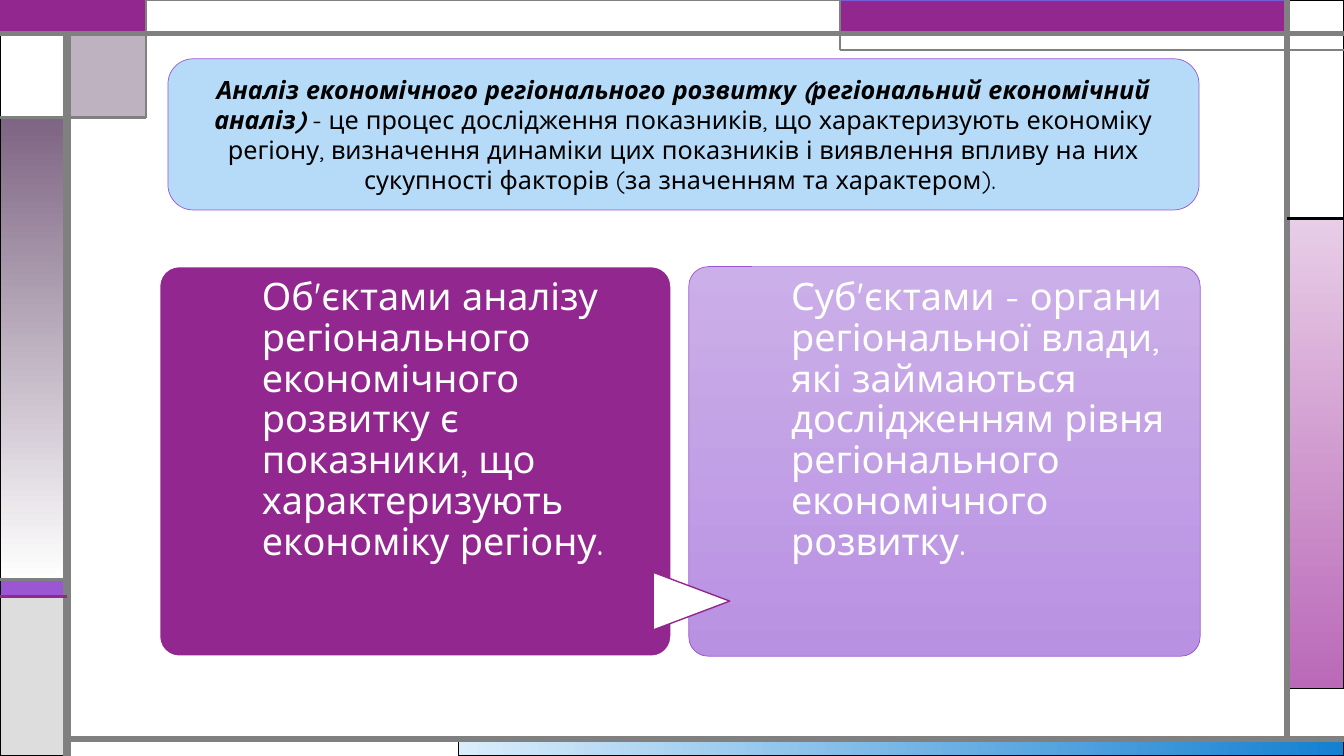
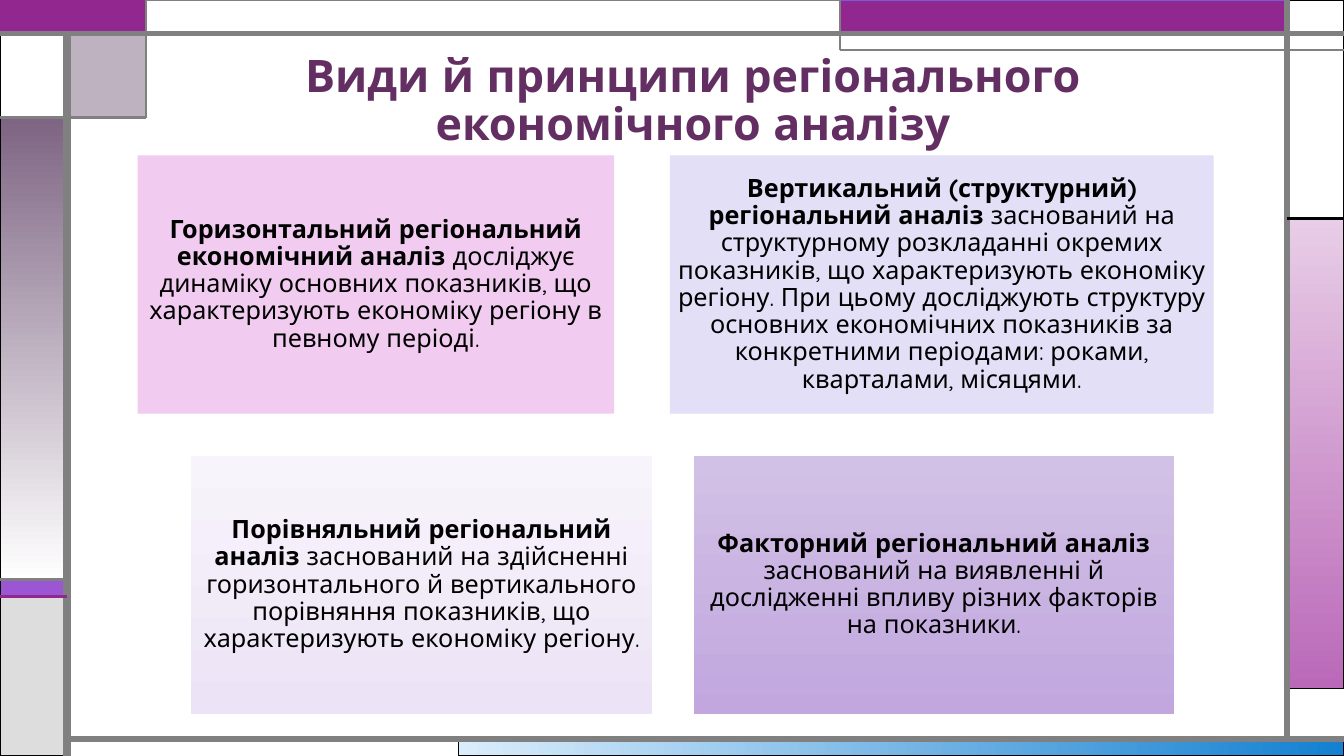
import pptx
import pptx.dml.color
import pptx.enum.shapes
import pptx.enum.text
import pptx.oxml.ns
import pptx.util
from lxml import etree

PX = 9525
WIDTH, HEIGHT = 1280, 720
FONT = "Quicksand"
BLACK, WHITE, GRAY = "000000", "FFFFFF", "808080"
PLUM, VIOLET, MAUVE, TITLE = "92278F", "9B57D3", "7E6583", "632E62"
# Edges of the frame
LEFT, TAB, SPLIT, RIGHT = 64, 139, 800, 1226
TOP, STEP, LOW, BASE, FLOOR = 32, 112, 552, 568, 704

KIND = pptx.enum.shapes.MSO_SHAPE
ANCHOR = pptx.enum.text.MSO_ANCHOR
ALIGN = pptx.enum.text.PP_ALIGN


def px(*nums):
    return [pptx.util.Emu(n * PX) for n in nums]


def color(code):
    return pptx.dml.color.RGBColor.from_string(code)


def add_xml(parent, tag, **attrs):
    etree.SubElement(parent, pptx.oxml.ns.qn(tag), **attrs)


def paint(shape, fill, angle=270):
    """Fill with one colour, or with a pair as a gradient (270 runs down)."""
    if isinstance(fill, str):
        shape.fill.solid()
        shape.fill.fore_color.rgb = color(fill)
        return
    shape.fill.gradient()
    shape.fill.gradient_angle = angle
    for stop, code in zip(shape.fill.gradient_stops, fill):
        stop.color.rgb = color(code)


def add_box(slide, area, fill, line=None, width=0.75, kind=KIND.RECTANGLE, angle=270):
    shape = slide.shapes.add_shape(kind, *px(*area))
    shape.shadow.inherit = False
    paint(shape, fill, angle)
    if line:
        shape.line.color.rgb = color(line)
        shape.line.width = pptx.util.Pt(width)
    else:
        shape.line.fill.background()
    return shape


def add_line(slide, start, end, width, code=GRAY):
    line = slide.shapes.add_connector(
        pptx.enum.shapes.MSO_CONNECTOR.STRAIGHT, *px(*start, *end))
    line.line.color.rgb = color(code)
    line.line.width = pptx.util.Pt(width)
    add_xml(line._element.spPr, "a:effectLst")


def write(shape, parts, size, code=BLACK, insets=(10, 5, 10, 5),
          anchor=ANCHOR.MIDDLE, align=ALIGN.CENTER, spacing=0.9):
    """Write one paragraph and return its runs."""
    frame = shape.text_frame
    frame.word_wrap = True
    frame.vertical_anchor = anchor
    (frame.margin_left, frame.margin_top,
     frame.margin_right, frame.margin_bottom) = px(*insets)
    para = frame.paragraphs[0]
    para.alignment = align
    para.line_spacing = spacing
    para.font.name = FONT
    para.font.size = pptx.util.Pt(size)
    para.font.color.rgb = color(code)
    for part in parts:
        para.add_run().text = part
    return para.runs


def add_frame(slide):
    """Draw the bands and rules around every slide."""
    side = WIDTH - RIGHT
    add_box(slide, (437, FLOOR, WIDTH - 437, HEIGHT - FLOOR),
            ("DAEDFB", "1480D1"), BLACK, angle=0)
    veil = None
    for area, fill, line, width in (
        ((RIGHT, 208, side, 448), ("E8CDE7", "BA69B8"), BLACK, 0.75),
        ((0, LOW, LEFT, BASE - LOW), VIOLET, BLACK, 0.75),
        ((0, BASE, LEFT, HEIGHT - BASE), "DDDDDD", BLACK, 0.75),
        ((RIGHT, 0, side, 208), WHITE, BLACK, 0.75),
        ((SPLIT, 0, RIGHT - SPLIT, TOP), PLUM, "755DD9", 0.75),
        ((0, STEP, LEFT, LOW - STEP), (MAUVE, WHITE), BLACK, 0.75),
        ((0, TOP, LEFT, STEP - TOP), WHITE, BLACK, 0.75),
        ((0, 0, TAB, TOP), PLUM, PLUM, 1.5),
        ((TAB, 0, SPLIT - TAB, TOP), WHITE, GRAY, 0.75),
        ((LEFT, TOP, TAB - LEFT, STEP - TOP), MAUVE, BLACK, 0.75),
    ):
        veil = add_box(slide, area, fill, line, width)
    tint = veil._element.spPr.find(pptx.oxml.ns.qn("a:solidFill"))[0]
    add_xml(tint, "a:alpha", val="50000")

    for start, end, width in (
        ((LEFT, HEIGHT), (LEFT, TOP), 6),
        ((LEFT, FLOOR), (WIDTH, FLOOR), 4.5),
        ((RIGHT, FLOOR), (RIGHT, 0), 4.5),
        ((0, TOP), (WIDTH, TOP), 3),
        ((WIDTH, 48), (SPLIT, 48), 1.5),
        ((SPLIT, 48), (SPLIT, 0), 1.5),
        ((TAB, 0), (TAB, STEP), 1.5),
        ((TAB, STEP), (0, STEP), 2.25),
        ((LEFT, LOW), (0, LOW), 2.25),
    ):
        add_line(slide, start, end, width)
    add_line(slide, (RIGHT, 208), (WIDTH, 208), 2.25, BLACK)
    add_line(slide, (LEFT, BASE), (0, BASE), 2.25, PLUM)


def add_slide(deck):
    slide = deck.slides.add_slide(deck.slide_layouts[6])
    add_frame(slide)
    return slide


def add_title(slide, text):
    box = slide.shapes.add_textbox(*px(156, 28, 1008, 120))
    write(box, [text], 32, TITLE, anchor=ANCHOR.BOTTOM)[0].font.bold = True


def add_panel(slide, left, fill, line, width, text):
    panel = add_box(slide, (left, 254, 487, 371), fill, line, width,
                    KIND.ROUNDED_RECTANGLE)
    panel.adjustments[0] = 0.05
    write(panel, [text], 27, WHITE, (92, 5, 21, 0), ANCHOR.TOP, ALIGN.LEFT)


def add_card(slide, area, fill, term, text):
    card = add_box(slide, area, fill)
    runs = write(card, [term + " ", text], 18, insets=(7, 7, 7, 7))
    runs[0].font.bold = True


def add_scope(deck):
    slide = add_slide(deck)
    add_panel(slide, 152, PLUM, WHITE, 1,
              "Об'єктами аналізу регіонального економічного розвитку є "
              "показники, що характеризують економіку регіону.")
    add_panel(slide, 656, ("CBAFE8", "B991E3"), VIOLET, 0.5,
              "Суб'єктами - органи регіональної влади, які займаються "
              "дослідженням рівня регіонального економічного розвитку.")
    arrow = add_box(slide, (631, 536, 55, 73), WHITE, PLUM, 1,
                    KIND.FLOWCHART_EXTRACT)
    arrow.rotation = 90
    banner = add_box(slide, (160, 56, 982, 144), "B5DBF8", VIOLET, 0.5,
                     KIND.ROUNDED_RECTANGLE)
    term = write(banner, [
        "Аналіз економічного регіонального розвитку "
        "(регіональний економічний аналіз) ",
        "- це процес дослідження показників, що характеризують економіку "
        "регіону, визначення динаміки цих показників і виявлення впливу на "
        "них сукупності факторів (за значенням та характером). ",
    ], 18, spacing=1.0)[0]
    term.font.bold = term.font.italic = True


def add_types(deck):
    slide = add_slide(deck)
    add_title(slide, "Види й принципи регіонального економічного аналізу")
    for left, top, width, fill, term, text in (
        (131, 148, 454, "F1CCF0", "Горизонтальний регіональний економічний аналіз",
         "досліджує динаміку основних показників, що характеризують "
         "економіку регіону в певному періоді."),
        (638, 148, 518, "E3DFF7", "Вертикальний (структурний) регіональний аналіз",
         "заснований на структурному розкладанні окремих показників, що "
         "характеризують економіку регіону. При цьому досліджують структуру "
         "основних економічних показників за конкретними періодами: роками, "
         "кварталами, місяцями."),
        (182, 434, 439, ("F7F4FB", "ECE4F6"), "Порівняльний регіональний аналіз",
         "заснований на здійсненні горизонтального й вертикального "
         "порівняння показників, що характеризують економіку регіону."),
        (661, 434, 457, ("D2C1E6", "C1A7DE"), "Факторний регіональний аналіз",
         "заснований на виявленні й дослідженні впливу різних факторів на "
         "показники."),
    ):
        add_card(slide, (left, top, width, 246), fill, term, text)


def main():
    deck = pptx.Presentation()
    deck.slide_width, deck.slide_height = px(WIDTH, HEIGHT)
    add_scope(deck)
    add_types(deck)
    deck.save("out.pptx")


if __name__ == "__main__":
    main()
